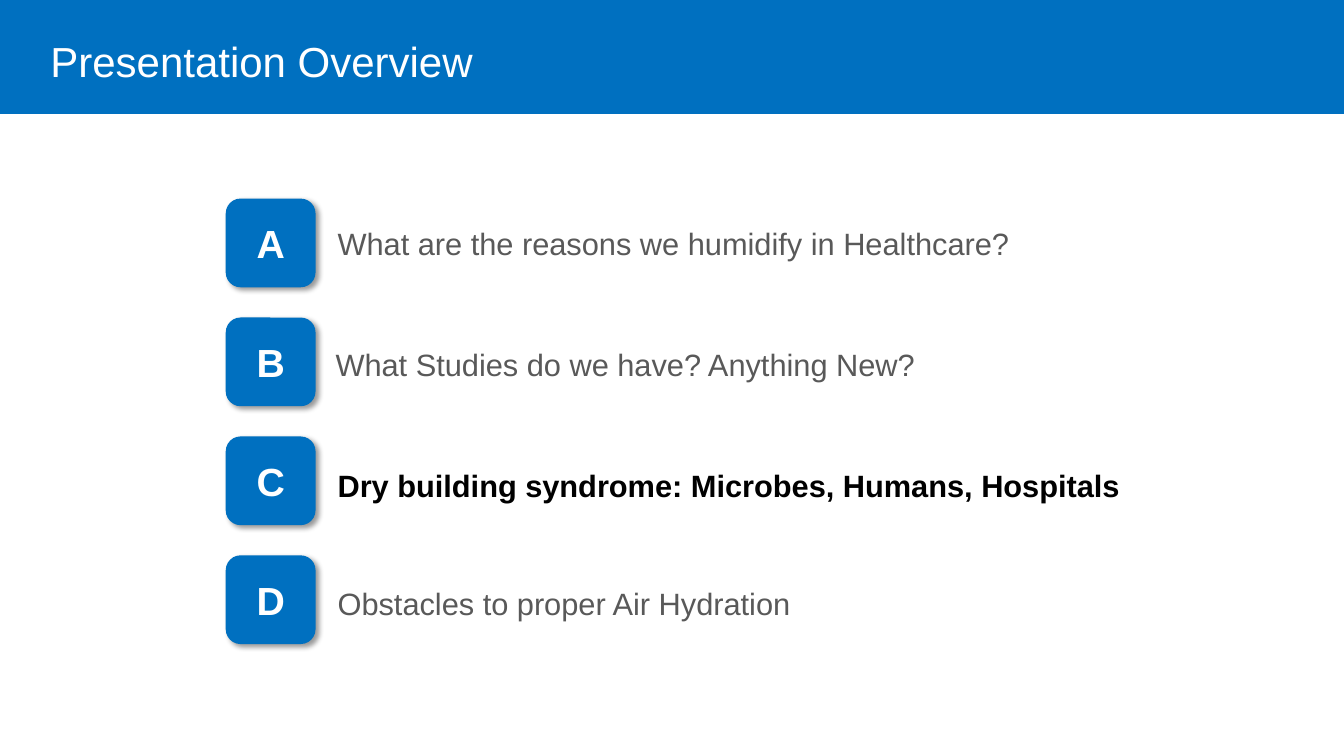
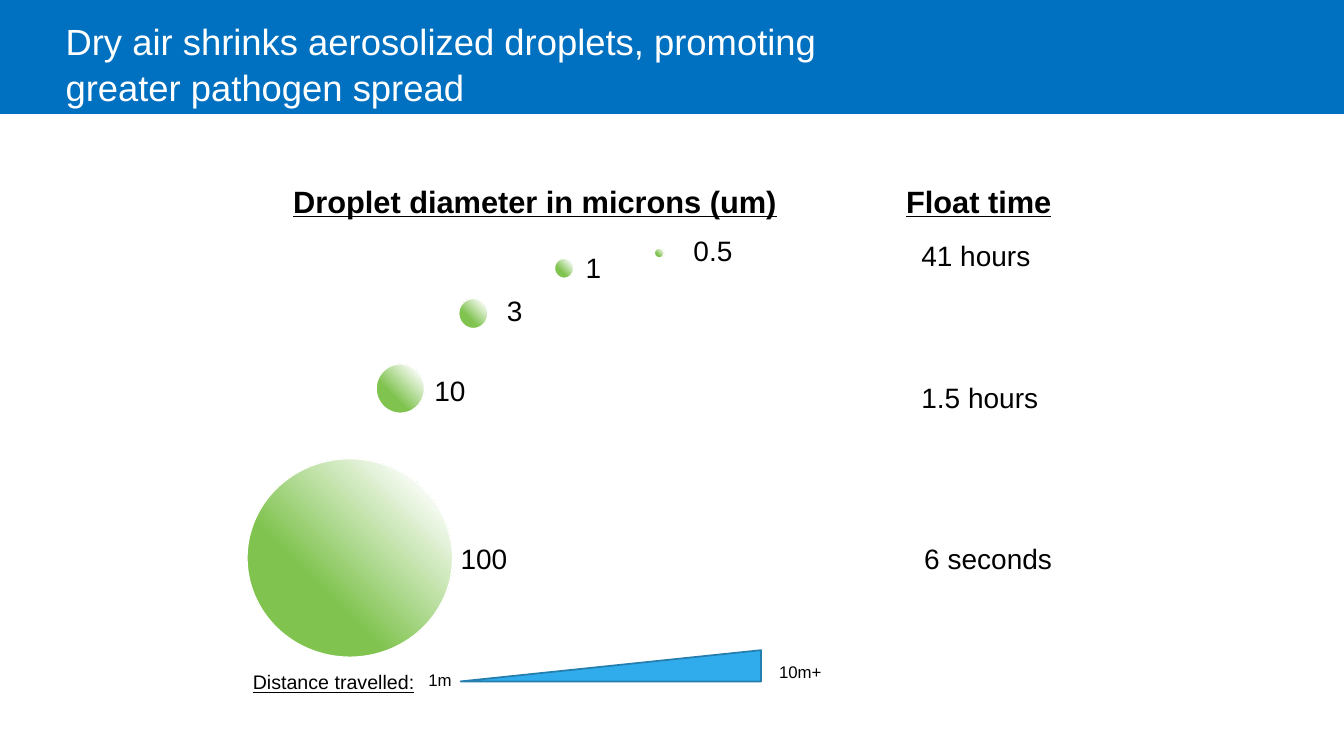
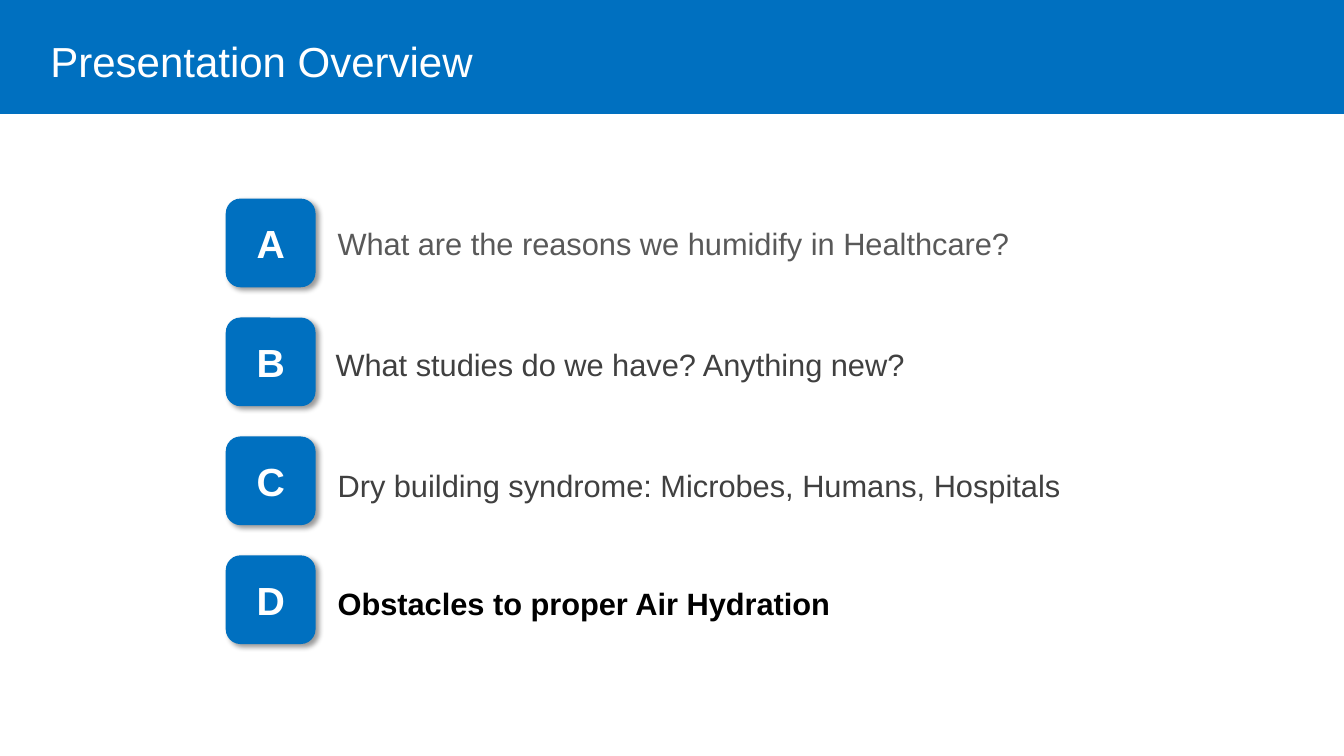
import pptx
import pptx.dml.color
import pptx.enum.shapes
import pptx.enum.text
import pptx.oxml
import pptx.oxml.ns
import pptx.util

RGBColor = pptx.dml.color.RGBColor
SHAPE = pptx.enum.shapes.MSO_SHAPE
ALIGN = pptx.enum.text.PP_ALIGN
ANCHOR = pptx.enum.text.MSO_ANCHOR

BLUE = RGBColor(0x00, 0x70, 0xC0)
SKY = RGBColor(0x30, 0xAC, 0xEC)
SKY_EDGE = RGBColor(0x24, 0x7F, 0xAF)
GREEN = RGBColor(0x80, 0xC3, 0x4F)
WHITE = RGBColor(0xFF, 0xFF, 0xFF)
BLACK = RGBColor(0x00, 0x00, 0x00)
GREY = RGBColor(0x59, 0x59, 0x59)
DARK = RGBColor(0x40, 0x40, 0x40)

WIDTH, HEIGHT = pptx.util.Inches(13.33), pptx.util.Inches(7.5)
COLS = ROWS = 100
ROW_PITCH = 15.73
TILE_WIDTH, TILE_HEIGHT = 6.68, 11.73

TITLE = {"size": 30, "color": WHITE}
LONG_TITLE = {"size": 26, "color": WHITE}
TILE = {"size": 28, "color": WHITE, "bold": True}
HEADING = {"size": 22, "color": BLACK, "bold": True, "underline": True}
VALUE = {"size": 20, "color": BLACK}
CAPTION = {"size": 14, "color": BLACK, "underline": True}
SMALL = {"size": 12, "color": BLACK}
PLAIN = {"size": 22, "color": GREY}
DEEP = {"size": 22, "color": DARK}
CURRENT = {"size": 22, "color": BLACK, "bold": True}

NS = pptx.oxml.ns.nsdecls("a")
SHADOW = f"""<a:effectLst {NS}>
<a:outerShdw blurRad="50800" dist="38100" dir="2700000" algn="tl" rotWithShape="0">
<a:srgbClr val="{BLACK}"><a:alpha val="40000"/></a:srgbClr></a:outerShdw></a:effectLst>"""
GRADIENT = f"""<a:gradFill {NS} rotWithShape="1"><a:gsLst>
<a:gs pos="11000"><a:srgbClr val="{WHITE}"/></a:gs>
<a:gs pos="65000"><a:srgbClr val="{GREEN}"/></a:gs>
<a:gs pos="100000"><a:srgbClr val="{GREEN}"/></a:gs></a:gsLst>
<a:path path="circle"><a:fillToRect l="100000" b="100000"/></a:path></a:gradFill>"""


def grid(col, row, cols, rows):
    """Turn grid columns and rows into slide lengths."""
    return [int(n) for n in (col * WIDTH / COLS, row * HEIGHT / ROWS,
                             cols * WIDTH / COLS, rows * HEIGHT / ROWS)]


def within(box, col, row, cols, rows):
    """Shift a cell from a box's corner to the slide's corner."""
    return box[0] + col, box[1] + row, cols, rows


def write(tf, text, style, align=ALIGN.LEFT, spacing=1.0):
    """Fill a text frame with one styled paragraph."""
    p = tf.paragraphs[0]
    p.alignment, p.line_spacing = align, spacing
    r = p.add_run()
    r.text = text
    values = {**style, "name": "Arial", "size": pptx.util.Pt(style["size"])}
    r.font.color.rgb = values.pop("color")
    for name, value in values.items():
        setattr(r.font, name, value)


def add_text(slide, cell, text, style, wrap=False, **layout):
    """Add a text box on the grid."""
    tf = slide.shapes.add_textbox(*grid(*cell)).text_frame
    tf.word_wrap = wrap
    write(tf, text, style, **layout)


def add_shape(slide, kind, cell, fill=None, line=None, weight=1):
    """Add a preset shape without a shadow."""
    sp = slide.shapes.add_shape(kind, *grid(*cell))
    sp.shadow.inherit = False
    if fill is not None:
        sp.fill.solid()
        sp.fill.fore_color.rgb = fill
    if line is None:
        sp.line.fill.background()
    else:
        sp.line.color.rgb = line
        sp.line.width = pptx.util.Pt(weight)
    return sp


def add_title(slide, cell, text, style, anchor, spacing=1.0):
    """Place and fill the title placeholder."""
    sp = slide.shapes.title
    sp.left, sp.top, sp.width, sp.height = grid(*cell)
    tf = sp.text_frame
    formats = {"auto_size": pptx.enum.text.MSO_AUTO_SIZE.NONE,
               "word_wrap": True, "vertical_anchor": anchor}
    for name, value in formats.items():
        setattr(tf, name, value)
    write(tf, text, style, spacing=spacing)


def add_band(slide):
    """Put the title band on the layout that the slides share."""
    band = add_shape(slide, SHAPE.RECTANGLE, (0, 0, COLS, 15.07), BLUE)
    slide.slide_layout.shapes.element.insert(2, band.element)


def add_agenda(slide, box, items):
    """Stack lettered tiles, each with its label."""
    offsets = [(7.58, 3.4), (7.43, 3.6), (7.58, 3.87), (7.58, 3.73)]
    for i, ((text, style), (dx, dy)) in enumerate(zip(items, offsets)):
        row = i * ROW_PITCH
        sp = add_shape(slide, SHAPE.ROUNDED_RECTANGLE,
                       within(box, 0, row, TILE_WIDTH, TILE_HEIGHT), BLUE)
        properties = sp.element.spPr
        properties.remove(properties.find(pptx.oxml.ns.qn("a:effectLst")))
        properties.append(pptx.oxml.parse_xml(SHADOW))
        sp.text_frame.vertical_anchor = ANCHOR.MIDDLE
        write(sp.text_frame, "ABCD"[i], TILE, ALIGN.CENTER)
        add_text(slide, within(box, dx, row + dy, box[2] - dx, 6.1),
                 text, style, wrap=True, spacing=0.9)


def overview_slide(slide, items):
    """Build an overview with its agenda."""
    add_title(slide, (3, 0, 57.6, 12), "Presentation Overview", TITLE, ANCHOR.BOTTOM)
    add_agenda(slide, (16.8, 26.27, 72.5), items)


def add_droplets(slide, box):
    """Draw the droplets with their diameters."""
    droplets = [
        ("100", (0, 37.2, 15.3, 26.27), (15.15, 47.47, 5.63)),
        ("10", (9.6, 24.67, 3.6, 6.53), (13.2, 25.33, 3.83)),
        ("3", (15.75, 16, 2.18, 4), (18.6, 14.67, 2.7)),
        ("1", (22.88, 10.67, 1.43, 2.67), (24.45, 9.07, 2.7)),
        ("0.5", (30.3, 9.33, 0.75, 1.33), (32.48, 6.8, 4.43)),
    ]
    add_text(slide, within(box, 2.7, 0, 37.95, 6.27),
             "Droplet diameter in microns (um)", HEADING)
    for text, cell, label in droplets:
        sp = add_shape(slide, SHAPE.OVAL, within(box, *cell), line=WHITE)
        outline = sp.element.spPr.find(pptx.oxml.ns.qn("a:prstGeom"))
        outline.addnext(pptx.oxml.parse_xml(GRADIENT))
        add_text(slide, within(box, *label, 5.87), text, VALUE)


def add_float_times(slide, box):
    """List the float times under their heading."""
    times = [("41 hours", 1.13, 7.47, 9.68), ("1.5 hours", 1.13, 26.27, 10.28),
             ("6 seconds", 1.35, 47.47, 11.1)]
    add_text(slide, within(box, 0, 0, 12.45, 6.27), "Float time", HEADING)
    for text, col, row, cols in times:
        add_text(slide, within(box, col, row, cols, 5.87), text, VALUE)


def add_distance(slide, box):
    """Draw the wedge of distance travelled."""
    sp = add_shape(slide, SHAPE.ISOSCELES_TRIANGLE,
                   within(box, 16.8, 0, 22.35, 4.13), SKY, SKY_EDGE, 1.25)
    sp.adjustments[0] = 1
    add_text(slide, within(box, 0, 2, 14.1, 4.53), "Distance travelled:",
             CAPTION, wrap=True, align=ALIGN.RIGHT)
    for text, col, row in (("1m", 13.65, 2), ("10m+", 39.75, 0.93)):
        add_text(slide, within(box, col, row, 4.8, 4), text, SMALL, wrap=True)


def droplet_slide(slide):
    """Build the slide on droplet size and float time."""
    add_title(slide, (4.13, 1.6, 59.93, 16.53),
              "Dry air shrinks aerosolized droplets, promoting greater pathogen spread",
              LONG_TITLE, ANCHOR.TOP, 1.05)
    add_droplets(slide, (18.38, 23.47))
    add_float_times(slide, (66.68, 23.47))
    add_distance(slide, (17.48, 86))


def main():
    """Build and save the presentation."""
    prs = pptx.Presentation()
    prs.slide_width, prs.slide_height = WIDTH, HEIGHT
    layout = prs.slide_layouts.get_by_name("Title Only")
    first, second, third = [prs.slides.add_slide(layout) for _ in range(3)]
    add_band(first)
    reasons = "What are the reasons we humidify in Healthcare?"
    syndrome = "Dry building syndrome: Microbes, Humans, Hospitals"
    obstacles = "Obstacles to proper Air Hydration"
    overview_slide(first, [(reasons, PLAIN),
                           ("What Studies do we have? Anything New?", PLAIN),
                           (syndrome, CURRENT), (obstacles, PLAIN)])
    droplet_slide(second)
    overview_slide(third, [(reasons, PLAIN),
                           ("What studies do we have? Anything new?", DEEP),
                           (syndrome, DEEP), (obstacles, CURRENT)])
    prs.save("out.pptx")


if __name__ == "__main__":
    main()
